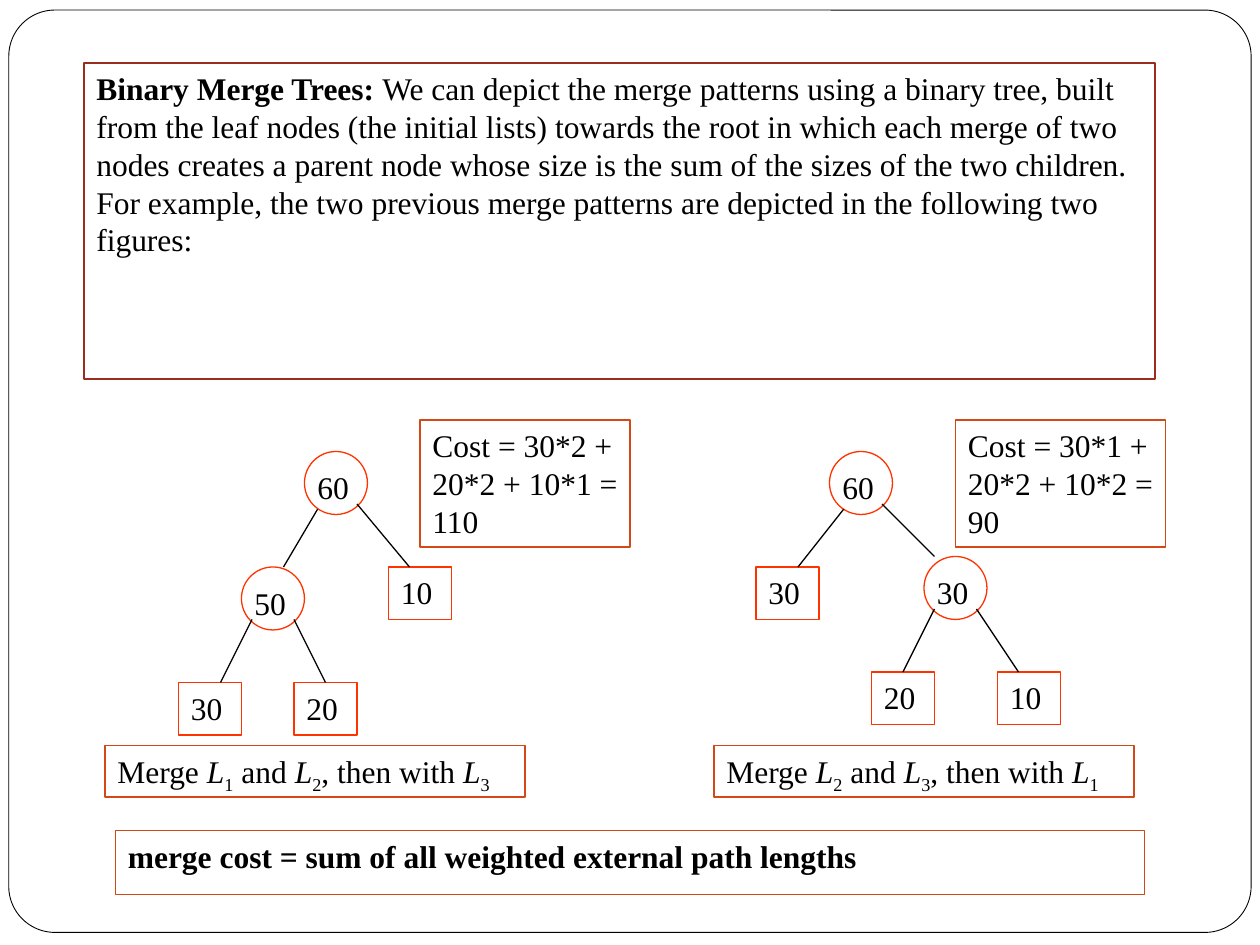
"""Build a slide that compares two binary merge trees and their costs."""
from pptx import Presentation
from pptx.dml.color import RGBColor
from pptx.enum.shapes import MSO_CONNECTOR as Connector, MSO_SHAPE as Shape
from pptx.enum.text import MSO_ANCHOR as Anchor, PP_ALIGN as Align
from pptx.oxml.ns import qn
from pptx.oxml.xmlchemy import OxmlElement
from pptx.util import Inches, Pt

COLORS = {"ink": "000000", "paper": "FFFFFF", "intro": "9B2D1F",
          "box": "D34817", "node": "FF3300"}
FONT, SIZE = "Times New Roman", 18
CELLS_PER_INCH = 12
NODE, LEAF_HEIGHT = 6, 5
BOX_INSETS, CIRCLE_INSETS = (0.1, 0.05), (0.03, 0.06)

INTRO = [
    ("Binary Merge Trees: ", "bold"),
    ("We can depict the merge patterns using a binary tree, built from the leaf "
     "nodes (the initial lists) towards the root in which each merge of two nodes "
     "creates a parent node whose size is the sum of the sizes of the two children.  "
     "For example, the two previous merge patterns are depicted in the following "
     "two figures:", ""),
]
CONCLUSION = [("merge cost = sum of all weighted external path lengths", "bold")]

TREES = [
    {"order": "123", "caption": (10, 71),
     "cost": "Cost = 30*2 + 20*2 + 10*1 = 110", "cost_at": (40, 40),
     "inner": [("60", 29, 43), ("50", 23, 54)],
     "leaves": [("30", 17, 65), ("20", 28, 65), ("10", 37, 54)],
     "edges": [(30.25, 48.5, 27, 54), (34, 48, 39, 54),
               (24, 59, 21, 65), (28, 59, 31, 65)]},
    {"order": "231", "caption": (68, 71),
     "cost": "Cost = 30*1 + 20*2 + 10*2 = 90", "cost_at": (91, 40),
     "inner": [("60", 79, 43), ("30", 88, 53)],
     "leaves": [("30", 72, 54), ("20", 83, 64), ("10", 95, 64)],
     "edges": [(80.35, 48.5, 76, 54), (84, 48, 89, 53),
               (89, 58, 86, 64), (93, 58, 97, 64)]},
]


def color(name):
    return RGBColor.from_string(COLORS[name])


def cells(*values):
    return [Inches(value / CELLS_PER_INCH) for value in values]


def add_runs(paragraph, runs):
    for text, style in runs:
        run = paragraph.add_run()
        run.text = text
        font = run.font
        font.name, font.size = FONT, Pt(SIZE)
        font.color.rgb = color("ink")
        font.bold, font.italic = style == "bold", style == "italic"
        if style == "sub":
            run._r.get_or_add_rPr().set("baseline", "-25000")


def add_box(slide, area, line, runs=(), kind=Shape.RECTANGLE, insets=BOX_INSETS):
    shape = slide.shapes.add_shape(kind, *cells(*area))
    shape.shadow.inherit = False
    shape.fill.background()
    shape.line.color.rgb = color(line)
    shape.line.width = Pt(0.75)
    frame = shape.text_frame
    frame.word_wrap = True
    frame.vertical_anchor = Anchor.TOP
    frame.margin_left = frame.margin_right = Inches(insets[0])
    frame.margin_top = frame.margin_bottom = Inches(insets[1])
    if kind == Shape.OVAL:
        frame.margin_right = frame.margin_bottom = 0
    frame.paragraphs[0].alignment = Align.LEFT
    add_runs(frame.paragraphs[0], runs)
    return shape


def add_edge(slide, edge, leaves):
    connector = slide.shapes.add_connector(Connector.STRAIGHT, *cells(*edge))
    connector.line.color.rgb = color("ink")
    connector.line.width = Pt(0.75)
    connector._element.spPr.append(OxmlElement("a:effectLst"))
    leaf = leaves.get(edge[2:])
    if leaf is not None:
        connector.end_connect(leaf, 0)


def caption_runs(order):
    runs = []
    for lead, number in zip(("Merge ", " and ", ", then with "), order):
        runs += [(lead, ""), ("L", "italic"), (number, "sub")]
    return runs


def add_tree(slide, tree):
    leaves = {}
    for label, left, top in tree["leaves"]:
        leaves[left + NODE / 2, top] = add_box(
            slide, (left, top, NODE, LEAF_HEIGHT), "node", [(label, "")])
    for label, left, top in tree["inner"]:
        add_box(slide, (left, top, NODE, NODE), "node", [(label, "")],
                Shape.OVAL, CIRCLE_INSETS)
    for edge in tree["edges"]:
        add_edge(slide, edge, leaves)
    add_box(slide, (*tree["caption"], 40, 4.9), "box", caption_runs(tree["order"]))
    add_box(slide, (*tree["cost_at"], 20, 12.1), "box", [(tree["cost"], "")])


def main():
    presentation = Presentation()
    presentation.slide_width, presentation.slide_height = Inches(10), Inches(7.5)
    slide = presentation.slides.add_slide(presentation.slide_layouts[6])
    border = add_box(slide, (0.84, 0.96, 118.32, 87.84), "ink",
                     kind=Shape.ROUNDED_RECTANGLE)
    border.adjustments[0] = 0.05
    border.fill.solid()
    border.fill.fore_color.rgb = color("paper")
    border.line.width = Pt(0.5)
    add_box(slide, (8, 6, 102, 30.1), "intro", INTRO)
    for tree in TREES:
        add_tree(slide, tree)
    add_box(slide, (11, 79.1, 98, 6.1), "box", CONCLUSION)
    presentation.save("out.pptx")


if __name__ == "__main__":
    main()
